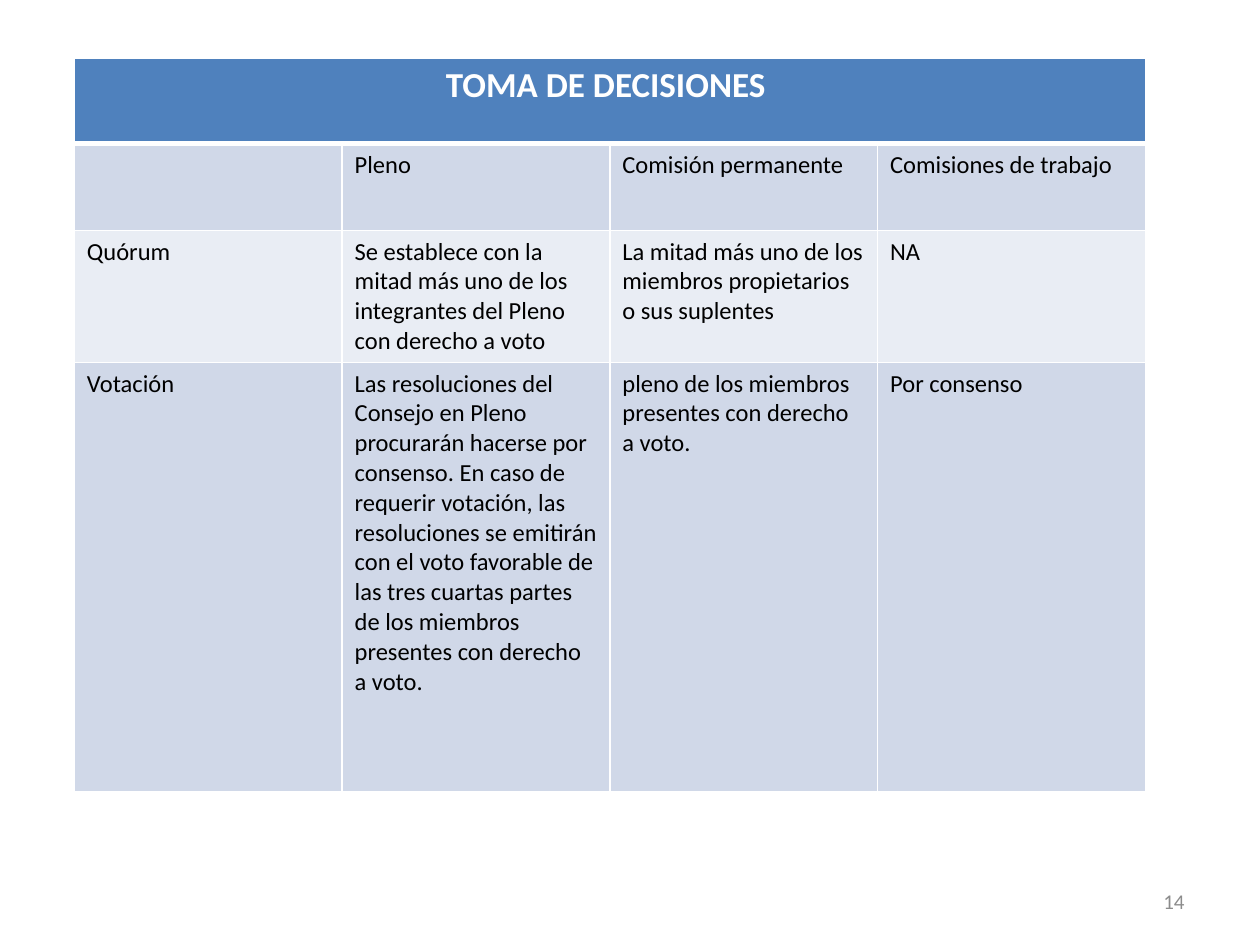
import pptx
import pptx.util
import pptx.dml.color
import pptx.enum.text
import pptx.oxml.ns
import lxml.etree

Inches = pptx.util.Inches
Pt = pptx.util.Pt
RGBColor = pptx.dml.color.RGBColor
PP_ALIGN = pptx.enum.text.PP_ALIGN

WHITE = RGBColor(0xFF, 0xFF, 0xFF)
BLACK = RGBColor(0x00, 0x00, 0x00)
GREY = RGBColor(0x8C, 0x8C, 0x8C)
HEADER_BLUE = RGBColor(0x4F, 0x81, 0xBD)
BAND_DARK = RGBColor(0xD0, 0xD8, 0xE8)
BAND_LIGHT = RGBColor(0xE9, 0xED, 0xF4)

TITLE = "TOMA DE DECISIONES "
ROWS = [
    ["", "Pleno", "Comisión permanente", "Comisiones de trabajo"],
    ["Quórum",
     "Se establece con la mitad más uno de los integrantes del Pleno con derecho a voto",
     "La mitad más uno de los miembros propietarios o sus suplentes",
     "NA"],
    ["Votación",
     "Las resoluciones del Consejo en Pleno procurarán hacerse por consenso. "
     "En caso de requerir votación, las resoluciones se emitirán con el voto "
     "favorable de las tres cuartas partes de los miembros presentes con derecho a voto.",
     "pleno de los miembros presentes con derecho a voto.",
     "Por consenso"],
]
ROW_HEIGHTS = [0.68, 0.69, 1.04, 3.41]
ROW_FILLS = [HEADER_BLUE, BAND_DARK, BAND_LIGHT, BAND_DARK]
TABLE_WIDTH = 8.5


def format_text(paragraph, size, color, bold=False, alignment=PP_ALIGN.LEFT):
    paragraph.alignment = alignment
    for run in paragraph.runs:
        run.font.name = "Calibri"
        run.font.size = Pt(size)
        run.font.bold = bold
        run.font.color.rgb = color


def set_borders(cell, widths):
    properties = cell._tc.get_or_add_tcPr()
    for position, (side, width) in enumerate(widths.items()):
        line = lxml.etree.Element(pptx.oxml.ns.qn("a:" + side), w=str(Pt(width)))
        fill = lxml.etree.SubElement(line, pptx.oxml.ns.qn("a:solidFill"))
        lxml.etree.SubElement(fill, pptx.oxml.ns.qn("a:srgbClr"), val=str(WHITE))
        properties.insert(position, line)


presentation = pptx.Presentation()
presentation.slide_width = Inches(10)
presentation.slide_height = Inches(7.5)
slide = presentation.slides.add_slide(presentation.slide_layouts[6])

# Decision table: four equal columns under one merged heading
column_count = len(ROWS[0])
table = slide.shapes.add_table(
    len(ROW_HEIGHTS), column_count, Inches(0.59), Inches(0.46),
    Inches(TABLE_WIDTH), Inches(sum(ROW_HEIGHTS))).table
for column in table.columns:
    column.width = Inches(TABLE_WIDTH / column_count)
for row, height in zip(table.rows, ROW_HEIGHTS):
    row.height = Inches(height)
table.cell(0, 0).merge(table.cell(0, column_count - 1))

# Fills and white rules, thicker below the heading
for row_index, fill_color in enumerate(ROW_FILLS):
    top = 3 if row_index == 1 else 1
    bottom = 3 if row_index == 0 else 1
    for cell in table.rows[row_index].cells:
        cell.fill.solid()
        cell.fill.fore_color.rgb = fill_color
        set_borders(cell, {"lnL": 1, "lnR": 1, "lnT": top, "lnB": bottom})

# Heading and cell text
heading = table.cell(0, 0).text_frame
heading.text = TITLE
format_text(heading.paragraphs[0], 20, WHITE, True, PP_ALIGN.CENTER)
for row_index, texts in enumerate(ROWS, start=1):
    for column_index, text in enumerate(texts):
        text_frame = table.cell(row_index, column_index).text_frame
        text_frame.text = text
        format_text(text_frame.paragraphs[0], 14, BLACK)

# Page number
page_number = slide.shapes.add_textbox(
    Inches(7.17), Inches(6.95), Inches(2.33), Inches(0.4)).text_frame
page_number.word_wrap = True
page_number.vertical_anchor = pptx.enum.text.MSO_ANCHOR.MIDDLE
page_number.text = "14"
format_text(page_number.paragraphs[0], 12, GREY, alignment=PP_ALIGN.RIGHT)

presentation.save("out.pptx")
